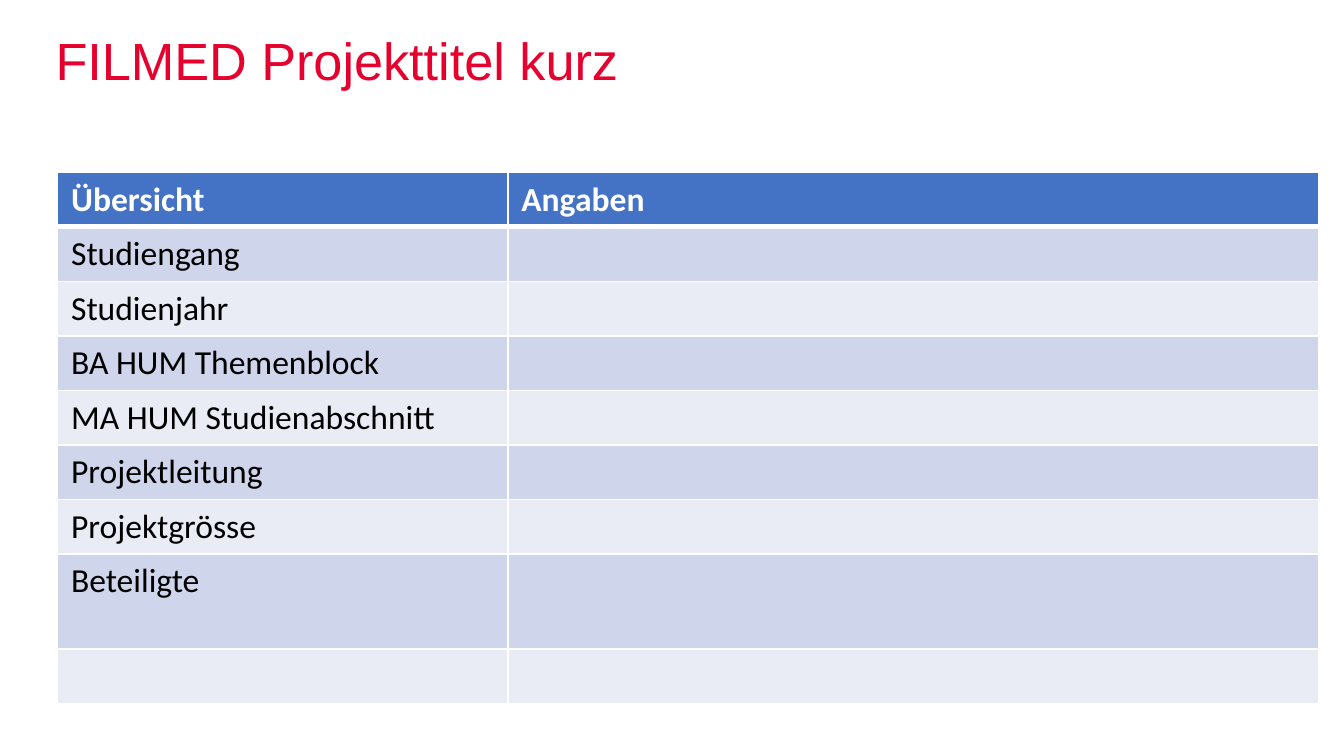
import pptx
import pptx.util
import pptx.dml.color
import pptx.enum.text
import pptx.oxml
import pptx.oxml.ns

Cm, Pt = pptx.util.Cm, pptx.util.Pt
RGBColor = pptx.dml.color.RGBColor

RED = RGBColor(0xE6, 0x00, 0x2E)
BLUE = RGBColor(0x44, 0x72, 0xC4)
DARK = RGBColor(0xCF, 0xD5, 0xEA)
LIGHT = RGBColor(0xE9, 0xEB, 0xF5)
WHITE = RGBColor(0xFF, 0xFF, 0xFF)
BLACK = RGBColor(0x00, 0x00, 0x00)

TITLE = {"name": "Arial", "size": Pt(28), "bold": False}
HEAD = {"name": "Calibri", "size": Pt(18), "bold": True}
BODY = {"name": "Calibri", "size": Pt(18), "bold": False}

ROWS = [
    ("Übersicht", "Angaben"),
    ("Studiengang", ""),
    ("Studienjahr", ""),
    ("BA HUM Themenblock", ""),
    ("MA HUM Studienabschnitt", ""),
    ("Projektleitung", ""),
    ("Projektgrösse", ""),
    ("Beteiligte", ""),
    ("", ""),
]
WIDTHS = (8.51, 15.32)
LOW, TALL = 1.03, 1.8


class Page:
    def __init__(self, slide):
        self.slide = slide

    def style(self, para, look, color):
        for key, value in look.items():
            setattr(para.font, key, value)
        para.font.color.rgb = color

    def title(self, text, left, top, width, height):
        box = self.slide.shapes.add_textbox(Cm(left), Cm(top), Cm(width), Cm(height))
        frame = box.text_frame
        form = {
            "word_wrap": True,
            "vertical_anchor": pptx.enum.text.MSO_ANCHOR.BOTTOM,
            "margin_left": 0,
            "margin_top": 0,
            "margin_right": 0,
            "margin_bottom": 0,
        }
        for key, value in form.items():
            setattr(frame, key, value)
        para = frame.paragraphs[0]
        para.text = text
        para.line_spacing = Pt(32)
        self.style(para, TITLE, RED)

    def border(self, cell, widths):
        """Draw white cell edges; widths maps a side letter to points."""
        props = cell._tc.get_or_add_tcPr()
        for side, width in widths.items():
            props.append(pptx.oxml.parse_xml(
                f'<a:ln{side} {pptx.oxml.ns.nsdecls("a")} w="{Pt(width)}">'
                f'<a:solidFill><a:srgbClr val="{WHITE}"/></a:solidFill></a:ln{side}>'
            ))

    def table(self, rows, left, top):
        heights = [TALL if row[0] == "Beteiligte" else LOW for row in rows]
        grid = self.slide.shapes.add_table(
            len(rows), len(WIDTHS), Cm(left), Cm(top),
            Cm(sum(WIDTHS)), Cm(sum(heights)),
        ).table
        for col, width in zip(grid.columns, WIDTHS):
            col.width = Cm(width)
        for i, row in enumerate(rows):
            grid.rows[i].height = Cm(heights[i])
            fill = BLUE if i == 0 else DARK if i % 2 else LIGHT
            look, color = (HEAD, WHITE) if i == 0 else (BODY, BLACK)
            edges = {"L": 1, "R": 1, "T": 3 if i == 1 else 1, "B": 3 if i == 0 else 1}
            for j, text in enumerate(row):
                cell = grid.cell(i, j)
                self.border(cell, edges)
                cell.fill.solid()
                cell.fill.fore_color.rgb = fill
                para = cell.text_frame.paragraphs[0]
                para.text = text
                self.style(para, look, color)


def main():
    deck = pptx.Presentation()
    deck.slide_width, deck.slide_height = Cm(25.4), Cm(14.29)
    page = Page(deck.slides.add_slide(deck.slide_layouts[6]))
    page.title("FILMED Projekttitel kurz", 1.05, 0.53, 20.4, 1.2)
    page.table(ROWS, 1.09, 3.26)
    deck.save("out.pptx")


if __name__ == "__main__":
    main()
